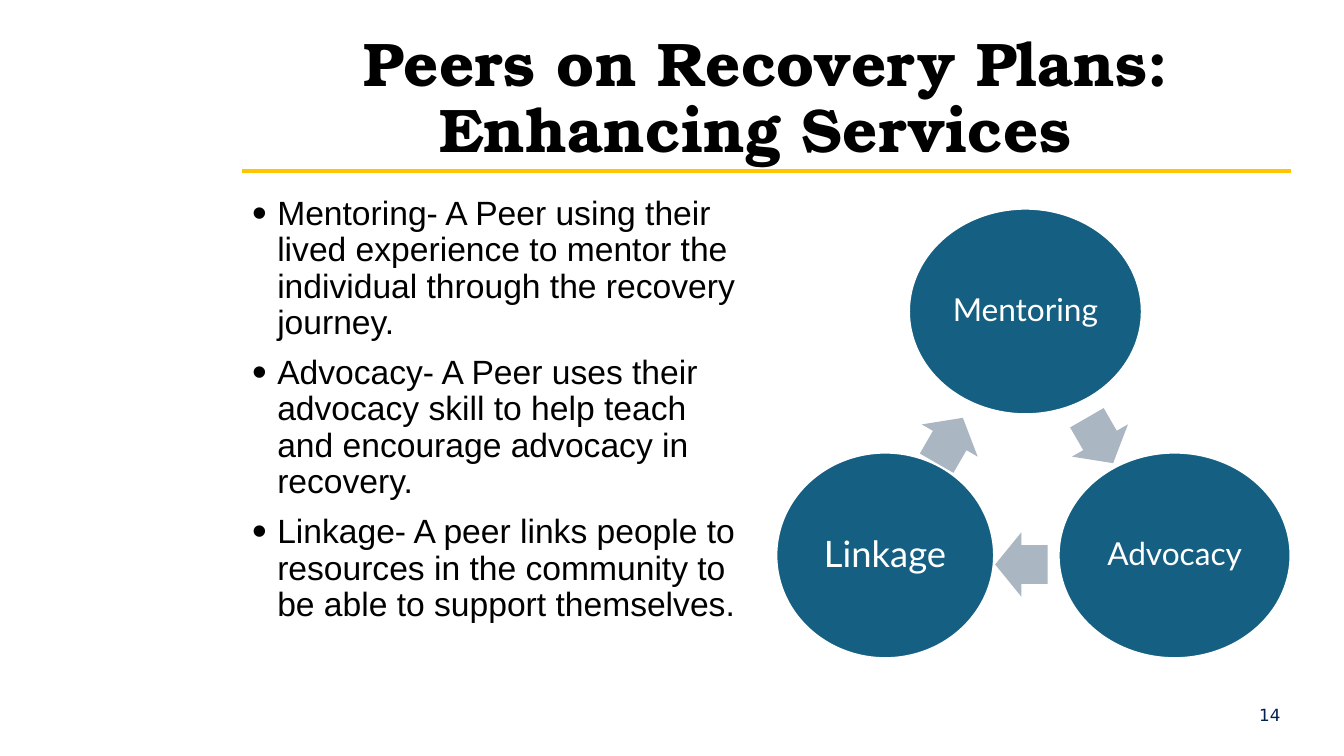
from lxml import etree
from pptx import Presentation
from pptx import util as u
from pptx.dml.color import RGBColor
from pptx.enum import shapes, text
from pptx.oxml import ns

BLACK = RGBColor(0, 0, 0)
WHITE = RGBColor(255, 255, 255)
GOLD = RGBColor(0xFF, 0xC6, 0x00)
TEAL = RGBColor(0x15, 0x60, 0x82)
GREY = RGBColor(0xAA, 0xB6, 0xC1)
NAVY = RGBColor(0x02, 0x21, 0x51)

LEFT, RIGHT, RULE = 24, 128, 17
MID = text.MSO_ANCHOR.MIDDLE
ALIGN = text.PP_ALIGN


class Deck:
    cell = u.Inches(0.1)
    head = "TeX Gyre Bonum"
    body = "Arial"
    label = "Lato"
    num = "DejaVu Sans"

    def __init__(self):
        self.prs = Presentation()
        self.prs.slide_width = u.Inches(13.33)
        self.prs.slide_height = u.Inches(7.5)
        self.slide = self.prs.slides.add_slide(self.prs.slide_layouts[1])
        self.items = self.slide.shapes

    def grid(self, *cells):
        return [u.Emu(round(n * self.cell)) for n in cells]

    def place(self, shape, *box):
        shape.left, shape.top, shape.width, shape.height = self.grid(*box)
        return shape

    def frame(self, shape, anchor):
        frame = shape.text_frame
        frame.word_wrap = True
        frame.auto_size = text.MSO_AUTO_SIZE.NONE
        frame.vertical_anchor = anchor
        return frame

    def words(self, para, line, face, size, color, align, bold=False):
        para.alignment = align
        para.line_spacing = 0.9
        para.space_before = u.Pt(0)
        run = para.add_run()
        run.text = line
        run.font.name = face
        run.font.size = u.Pt(size)
        run.font.color.rgb = color
        run.font.bold = bold

    def title(self, line, *box):
        shape = self.place(self.items.title, *box)
        frame = self.frame(shape, text.MSO_ANCHOR.BOTTOM)
        self.words(frame.paragraphs[0], line, self.head, 44, BLACK, ALIGN.CENTER, True)

    def bullet(self, para):
        props = para._p.get_or_add_pPr()
        props.set("marL", str(u.Inches(0.25)))
        props.set("indent", str(-u.Inches(0.25)))
        for tag, key, value in (
            ("a:buSzPct", "val", "125000"),
            ("a:buFont", "typeface", self.body),
            ("a:buChar", "char", "•"),
        ):
            etree.SubElement(props, ns.qn(tag)).set(key, value)

    def list(self, lines, *box):
        shape = self.place(self.slide.placeholders[1], *box)
        frame = self.frame(shape, text.MSO_ANCHOR.TOP)
        for i, line in enumerate(lines):
            para = frame.add_paragraph() if i else frame.paragraphs[0]
            self.bullet(para)
            self.words(para, line, self.body, 24, BLACK, ALIGN.LEFT)
            para.space_before = u.Pt(10 if i else 0)

    def rule(self, x1, x2, y):
        line = self.items.add_connector(
            shapes.MSO_CONNECTOR.STRAIGHT, *self.grid(x1, y, x2, y))
        line.line.color.rgb = GOLD
        line.line.width = u.Pt(3)
        etree.SubElement(line._element.spPr, ns.qn("a:effectLst"))

    def solid(self, kind, color, x, y, wide, high):
        box = self.grid(x - wide / 2, y - high / 2, wide, high)
        shape = self.items.add_shape(kind, *box)
        shape.shadow.inherit = False
        shape.fill.solid()
        shape.fill.fore_color.rgb = color
        return shape

    def disc(self, line, size, x, y, wide):
        shape = self.solid(shapes.MSO_SHAPE.OVAL, TEAL, x, y, wide, 20.4)
        shape.line.color.rgb = WHITE
        shape.line.width = u.Pt(1.5)
        frame = self.frame(shape, MID)
        frame.margin_left = frame.margin_right = 0
        frame.margin_top = frame.margin_bottom = 0
        self.words(frame.paragraphs[0], line, self.label, size, WHITE, ALIGN.CENTER)

    def arrow(self, turn, x, y):
        shape = self.solid(shapes.MSO_SHAPE.RIGHT_ARROW, GREY, x, y, 5.2, 6.4)
        shape.adjustments[0] = 0.6
        shape.adjustments[1] = 0.5
        shape.rotation = turn
        shape.line.fill.background()

    def page(self, line, *box):
        shape = self.items.add_textbox(*self.grid(*box))
        frame = self.frame(shape, MID)
        self.words(frame.paragraphs[0], line, self.num, 12, NAVY, ALIGN.RIGHT)


def main():
    deck = Deck()
    deck.title("Peers on Recovery Plans: Enhancing Services ", LEFT, 3, RIGHT - LEFT, 14)
    deck.rule(LEFT, RIGHT, RULE)
    deck.list([
        "Mentoring- A Peer using their lived experience to mentor the individual "
        "through the recovery journey.",
        "Advocacy- A Peer uses their advocacy skill to help teach and encourage "
        "advocacy in recovery.",
        "Linkage- A peer links people to resources in the community to be able "
        "to support themselves.",
    ], LEFT, 19, 51, 48)
    for disc in (
        ("Mentoring", 22.6, 101.7, 30.9, 23.1),
        ("Advocacy", 22.6, 116.5, 55.1, 23),
        ("Linkage", 26, 87.8, 55.1, 21.6),
    ):
        deck.disc(*disc)
    for arrow in ((60, 109.1, 43.7), (180, 101.3, 56), (300, 94.2, 43.7)):
        deck.arrow(*arrow)
    deck.page("14", 118, 69, 10, 4)
    deck.prs.save("out.pptx")


if __name__ == "__main__":
    main()
